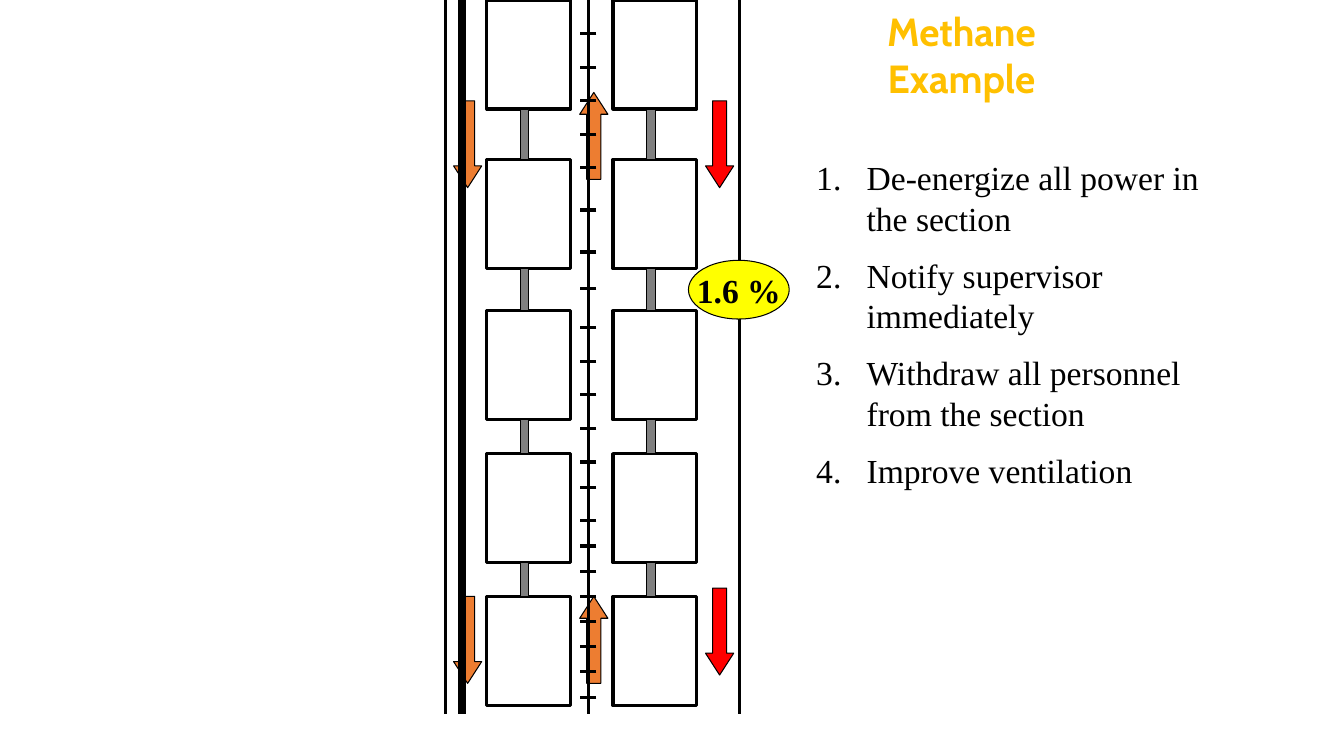
from itertools import pairwise

from lxml import etree
from pptx import Presentation
from pptx.dml.color import RGBColor as RGB
from pptx.enum.shapes import MSO_CONNECTOR as CONN, MSO_SHAPE as SHAPE
from pptx.enum.text import MSO_ANCHOR as ANCHOR, PP_ALIGN as ALIGN
from pptx.oxml.ns import qn
from pptx.util import Cm, Pt

COLORS = {"ink": "000000", "title": "FFC000", "stopping": "808080",
          "intake": "ED7D31", "return": "FF0000", "reading": "FFFF00"}
BODY = {"name": "Times New Roman", "size": Pt(24)}
PILLAR_W, PILLAR_H, PILLAR_STEP = 2.11, 2.75, 3.18
PILLAR_TOPS = [0, 4.02, 7.83, 11.43, 15.03]
TIE_TOPS = [0.85, 1.69, 2.54, 3.39, 4.23, 5.29, 6.35, 7.27, 8.26, 9.1, 9.95,
            10.8, 11.64, 12.28, 13.12, 13.76, 14.39, 15.03, 15.66, 16.3,
            16.93, 17.57]
ENTRY_LINES = [(0, 2.25), (0.42, 6), (3.6, 2.25), (7.41, 2.25)]
AIRFLOW = [(0.21, (2.54, 15.03), 180, "intake"),
           (3.39, (2.33, 15.03), 0, "intake"),
           (6.56, (2.54, 14.82), 180, "return")]
STEPS = ["De-energize all power in the section",
         "Notify supervisor immediately",
         "Withdraw all personnel from the section",
         "Improve ventilation"]


def rgb(name):
    return RGB.from_string(COLORS[name])


def add_block(slide, kind, box, fill=None, weight=0.75):
    sp = slide.shapes.add_shape(kind, *map(Cm, box))
    sp.shadow.inherit = False
    if fill:
        sp.fill.solid()
        sp.fill.fore_color.rgb = rgb(fill)
    else:
        sp.fill.background()
    sp.line.color.rgb = rgb("ink")
    sp.line.width = Pt(weight)
    return sp


def add_line(slide, x1, y1, x2, y2, weight=2.25):
    line = slide.shapes.add_connector(CONN.STRAIGHT, *map(Cm, (x1, y1, x2, y2)))
    line.line.color.rgb = rgb("ink")
    line.line.width = Pt(weight)
    etree.SubElement(line._element.spPr, qn("a:effectLst"))


def add_text(p, text, color, **font):
    r = p.add_run()
    r.text = text
    r.font.color.rgb = rgb(color)
    for key, value in font.items():
        setattr(r.font, key, value)


def add_title(slide, box):
    tf = slide.shapes.add_textbox(*map(Cm, box)).text_frame
    tf.word_wrap = True
    tf.vertical_anchor = ANCHOR.MIDDLE
    p = tf.paragraphs[0]
    p.alignment = ALIGN.CENTER
    add_text(p, "Methane Example", "title", name="Cabin", size=Pt(28), bold=True)


def add_mine_map(slide, box):
    x, y, w, h = box
    for col in range(2):
        left = x + 1.05 + col * PILLAR_STEP
        for top in PILLAR_TOPS:
            add_block(slide, SHAPE.RECTANGLE,
                      (left, y + top, PILLAR_W, PILLAR_H), weight=2.25)
        for top, below in pairwise(PILLAR_TOPS):
            bottom = top + PILLAR_H
            add_block(slide, SHAPE.RECTANGLE,
                      (left + 0.85, y + bottom, 0.21, below - bottom), "stopping")
    for dx, tops, turn, color in AIRFLOW:
        for top in tops:
            arrow = add_block(slide, SHAPE.UP_ARROW,
                              (x + dx, y + top, 0.71, 2.19), color)
            arrow.adjustments[0] = 0.5
            arrow.adjustments[1] = 0.775
            arrow.rotation = turn
    for dx, weight in ENTRY_LINES:
        add_line(slide, x + dx, y, x + dx, y + h, weight)
    for top in TIE_TOPS:
        add_line(slide, x + 3.81, y + top, x + 3.39, y + top)
    add_reading(slide, (x + w - 1.28, y + 6.56, 2.54, 1.48))


def add_reading(slide, box):
    tf = add_block(slide, SHAPE.OVAL, box, "reading").text_frame
    tf.word_wrap = False
    tf.vertical_anchor = ANCHOR.MIDDLE
    p = tf.paragraphs[0]
    p.alignment = ALIGN.CENTER
    add_text(p, "1.6 %", "ink", bold=True, **BODY)


def add_steps(slide, box):
    tf = slide.shapes.add_textbox(*map(Cm, box)).text_frame
    tf.word_wrap = True
    for i, step in enumerate(STEPS):
        p = tf.add_paragraph() if i else tf.paragraphs[0]
        p.space_before = Pt(12)
        pPr = p._p.get_or_add_pPr()
        pPr.set("marL", str(Cm(1.27)))
        pPr.set("indent", str(Cm(-1.27)))
        etree.SubElement(pPr, qn("a:buFont"), typeface=BODY["name"])
        etree.SubElement(pPr, qn("a:buAutoNum"), type="arabicPeriod")
        add_text(p, step, "ink", **BODY)


def main():
    prs = Presentation()
    prs.slide_width, prs.slide_height = Cm(33.87), Cm(19.05)
    slide = prs.slides.add_slide(prs.slide_layouts[6])
    add_title(slide, (21.59, 0, 5.28, 2.75))
    add_mine_map(slide, (11.22, 0, 7.41, 17.99))
    add_steps(slide, (20.32, 3.84, 11.23, 10.52))
    prs.save("out.pptx")


if __name__ == "__main__":
    main()
